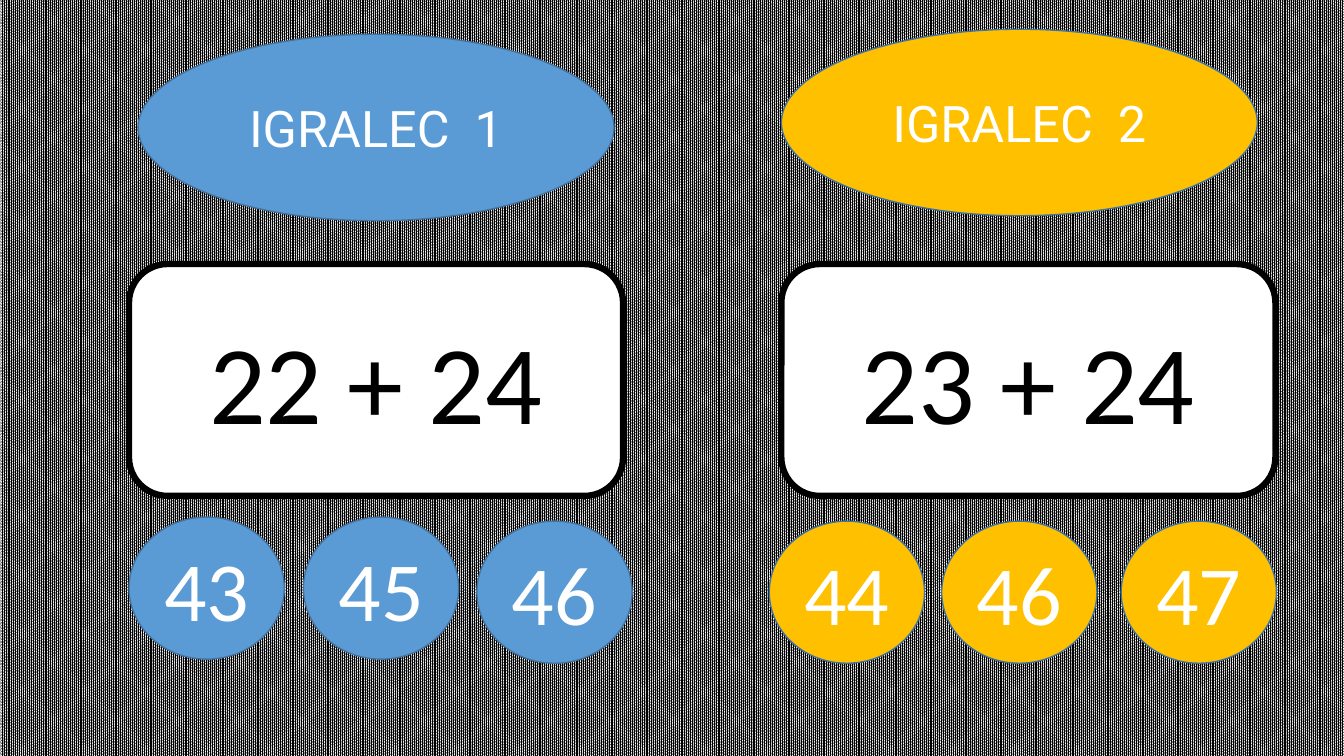
from pptx import Presentation
from pptx import util as u
from pptx.dml.color import RGBColor
from pptx.enum import dml, shapes, text

BLACK, WHITE = "000000", "FFFFFF"
BLUE, YELLOW, OUTLINE = "5B9BD5", "FFC000", "43739E"
OVAL = shapes.MSO_SHAPE.OVAL
ROUNDED = shapes.MSO_SHAPE.ROUNDED_RECTANGLE

# Per player: colour, name and its place, sum and its left edge, answers (left, top)
PLAYERS = [
    (BLUE, "IGRALEC  1", (1.37, 0.34), "22 + 24", 1.28,
     {"43": (1.28, 5.13), "45": (3.01, 5.13), "46": (4.73, 5.17)}),
    (YELLOW, "IGRALEC  2", (7.75, 0.29), "23 + 24", 7.75,
     {"44": (7.63, 5.17), "46": (9.34, 5.17), "47": (11.12, 5.17)}),
]


def colour(hex_code):
    return RGBColor.from_string(hex_code)


def add_label(slide, preset, place, size, words, fill, line, font):
    """Add a filled shape with centred words; line and font hold their settings."""
    label = slide.shapes.add_shape(preset, *map(u.Inches, place + size))
    label.shadow.inherit = False
    label.fill.solid()
    label.fill.fore_color.rgb = colour(fill)
    line_colour, line_width = line
    label.line.color.rgb = colour(line_colour)
    label.line.width = u.Pt(line_width)

    frame = label.text_frame
    frame.text = words
    frame.word_wrap = True
    frame.vertical_anchor = text.MSO_ANCHOR.MIDDLE
    paragraph = frame.paragraphs[0]
    paragraph.alignment = text.PP_ALIGN.CENTER
    run_font = paragraph.runs[0].font
    run_font.name, points, font_colour = font
    run_font.size = u.Pt(points)
    run_font.color.rgb = colour(font_colour)


def add_name(slide, place, name, fill):
    add_label(slide, OVAL, place, (4.72, 1.85), name, fill,
              (OUTLINE, 1), ("Roboto", 36, WHITE))


def add_sum(slide, left, task):
    add_label(slide, ROUNDED, (left, 2.62), (4.9, 2.3), task, WHITE,
              (BLACK, 4.5), ("Calibri", 80, BLACK))


def add_answer(slide, place, answer, fill):
    add_label(slide, OVAL, place, (1.54, 1.41), answer, fill,
              (OUTLINE, 1), ("Calibri", 60, WHITE))


def set_background(slide):
    backdrop = slide.background.fill
    backdrop.patterned()
    backdrop.pattern = dml.MSO_PATTERN.PERCENT_90
    backdrop.fore_color.rgb = colour(BLACK)
    backdrop.back_color.rgb = colour(WHITE)


def main():
    deck = Presentation()
    deck.slide_width, deck.slide_height = u.Inches(13.33), u.Inches(7.5)
    slide = deck.slides.add_slide(deck.slide_layouts[6])
    set_background(slide)

    # One half of the game board per player
    for fill, name, name_place, task, task_left, answers in PLAYERS:
        add_sum(slide, task_left, task)
        add_name(slide, name_place, name, fill)
        for answer, place in answers.items():
            add_answer(slide, place, answer, fill)

    deck.save("out.pptx")


if __name__ == "__main__":
    main()
